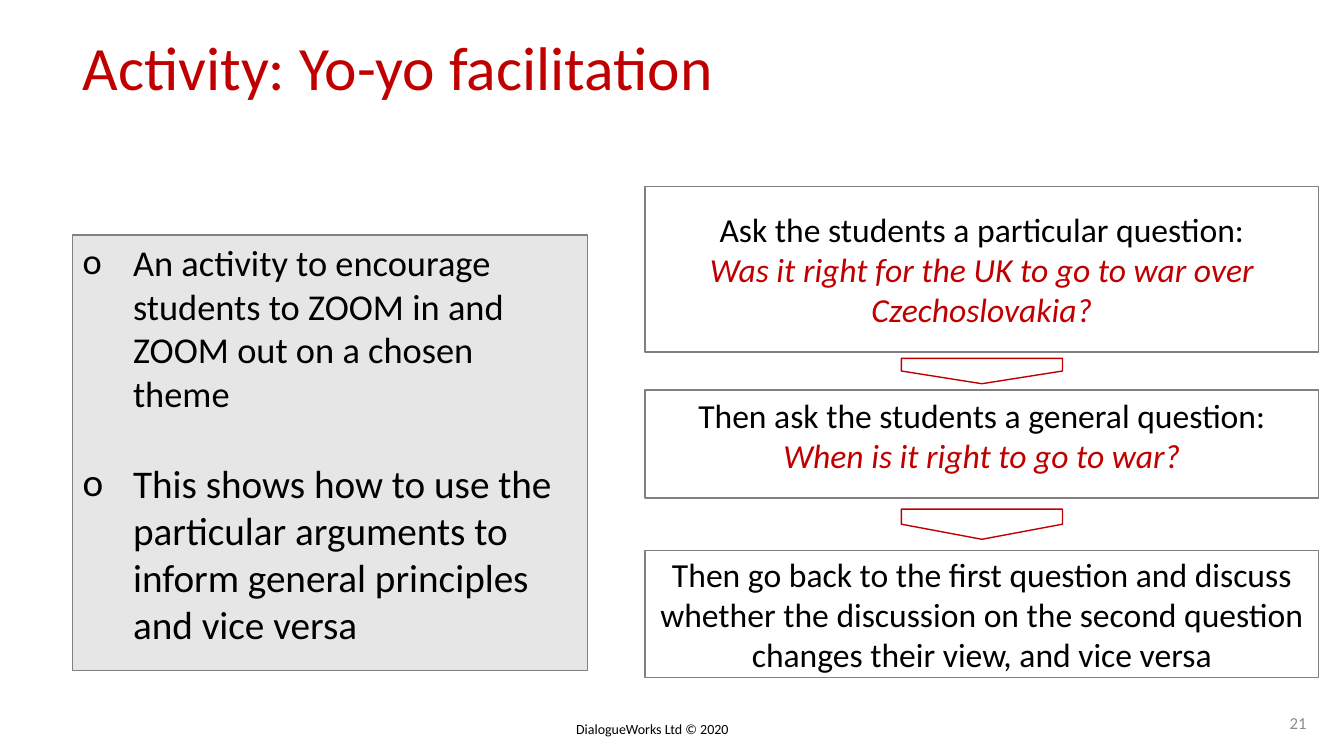
from itertools import pairwise

from lxml.etree import SubElement
from pptx import Presentation
from pptx.dml.color import RGBColor
from pptx.enum.shapes import MSO_SHAPE as Shape
from pptx.enum.text import MSO_ANCHOR as Anchor, MSO_AUTO_SIZE as AutoSize, PP_ALIGN as Align
from pptx.oxml.ns import qn
from pptx.util import Cm, Pt

FONT = "Calibri"
COLORS = {"red": "C00000", "black": "000000", "border": "808080",
          "panel": "E7E6E6", "number": "8C8C8C"}

LEFT = 1.83
STEP_LEFT, STEP_WIDTH = 16.26, 16.97
ARROW_SPAN = 4.06
ARROW_DEPTHS = [0.64, 0.76]

POINTS = [
    ("An activity to encourage students to ZOOM in and ZOOM out on a chosen theme", 26, 0),
    ("This shows how to use the particular arguments to inform general principles "
     "and vice versa", 28, 32),
]

# Top, height, anchor, instruction, example question
STEPS = [
    (4.7, 4.17, Anchor.MIDDLE, "Ask the students a particular question:",
     "Was it right for the UK to go to war over Czechoslovakia?"),
    (9.83, 2.72, Anchor.TOP, "Then ask the students a general question:",
     "When is it right to go to war?"),
    (13.87, 3.2, Anchor.MIDDLE,
     "Then go back to the first question and discuss whether the discussion "
     "on the second question changes their view, and vice versa", None),
]


def rgb(name):
    return RGBColor.from_string(COLORS[name])


def place(item, left, top, width, height):
    item.left, item.top, item.width, item.height = map(Cm, (left, top, width, height))


def outline(item, color):
    item.line.color.rgb = rgb(color)
    item.line.width = Pt(1)


def write(paragraph, text, size, color="black", italic=False, align=Align.LEFT):
    paragraph.alignment = align
    run = paragraph.add_run()
    run.text = text
    run.font.name = FONT
    run.font.size = Pt(size)
    run.font.color.rgb = rgb(color)
    run.font.italic = italic


def add_bullet(paragraph, indent):
    properties = paragraph._p.get_or_add_pPr()
    properties.set("marL", str(indent))
    properties.set("indent", str(-indent))
    SubElement(properties, qn("a:buFont"), typeface=FONT)
    SubElement(properties, qn("a:buChar"), char="o")


def add_outlined(slide, kind, box, color):
    item = slide.shapes.add_shape(kind, *map(Cm, box))
    item.shadow.inherit = False
    item.fill.background()
    outline(item, color)
    return item


def fill_title(title):
    place(title, LEFT, 0.81, 24.87, 2.69)
    frame = title.text_frame
    frame.auto_size = AutoSize.NONE
    frame.vertical_anchor = Anchor.TOP
    heading = frame.paragraphs[0]
    heading.line_spacing = 0.9
    write(heading, "Activity: Yo-yo facilitation", 44, "red")


def fill_points(panel):
    place(panel, LEFT, 5.92, 12.98, 10.97)
    panel.fill.solid()
    panel.fill.fore_color.rgb = rgb("panel")
    outline(panel, "border")
    frame = panel.text_frame
    frame.auto_size = AutoSize.NONE
    for index, (text, size, gap) in enumerate(POINTS):
        point = frame.add_paragraph() if index else frame.paragraphs[0]
        add_bullet(point, Cm(1.27))
        point.space_before = Pt(gap)
        write(point, text, size)


def add_step(slide, top, height, anchor, instruction, question):
    step = add_outlined(slide, Shape.RECTANGLE, (STEP_LEFT, top, STEP_WIDTH, height), "border")
    frame = step.text_frame
    frame.word_wrap = True
    frame.vertical_anchor = anchor
    write(frame.paragraphs[0], instruction, 24, align=Align.CENTER)
    if question:
        write(frame.add_paragraph(), question, 24, "red", True, Align.CENTER)


def add_down_arrow(slide, middle, depth):
    # Drawn pointing right, then turned about its centre
    center = STEP_LEFT + STEP_WIDTH / 2
    box = (center - depth / 2, middle - ARROW_SPAN / 2, depth, ARROW_SPAN)
    add_outlined(slide, Shape.PENTAGON, box, "red").rotation = 90


def add_label(slide, box, text, size, color, align=Align.LEFT, anchor=Anchor.TOP, wrap=False):
    frame = slide.shapes.add_textbox(*map(Cm, box)).text_frame
    frame.word_wrap = wrap
    frame.vertical_anchor = anchor
    write(frame.paragraphs[0], text, size, color, align=align)


def main():
    deck = Presentation()
    deck.slide_width, deck.slide_height = Cm(33.87), Cm(19.05)
    slide = deck.slides.add_slide(deck.slide_layouts[1])

    # Title and list
    fill_title(slide.shapes.title)
    fill_points(slide.placeholders[1])

    # Steps, with an arrow halfway down each gap
    for step in STEPS:
        add_step(slide, *step)
    for (upper, lower), depth in zip(pairwise(STEPS), ARROW_DEPTHS):
        add_down_arrow(slide, (upper[0] + upper[1] + lower[0]) / 2, depth)

    # Footer
    add_label(slide, (14.27, 18.03, 4.45, 0.69), "DialogueWorks Ltd © 2020", 10, "black")
    add_label(slide, (31.88, 17.7, 1.3, 1.02), "21", 12, "number",
              Align.RIGHT, Anchor.MIDDLE, True)

    deck.save("out.pptx")


if __name__ == "__main__":
    main()
